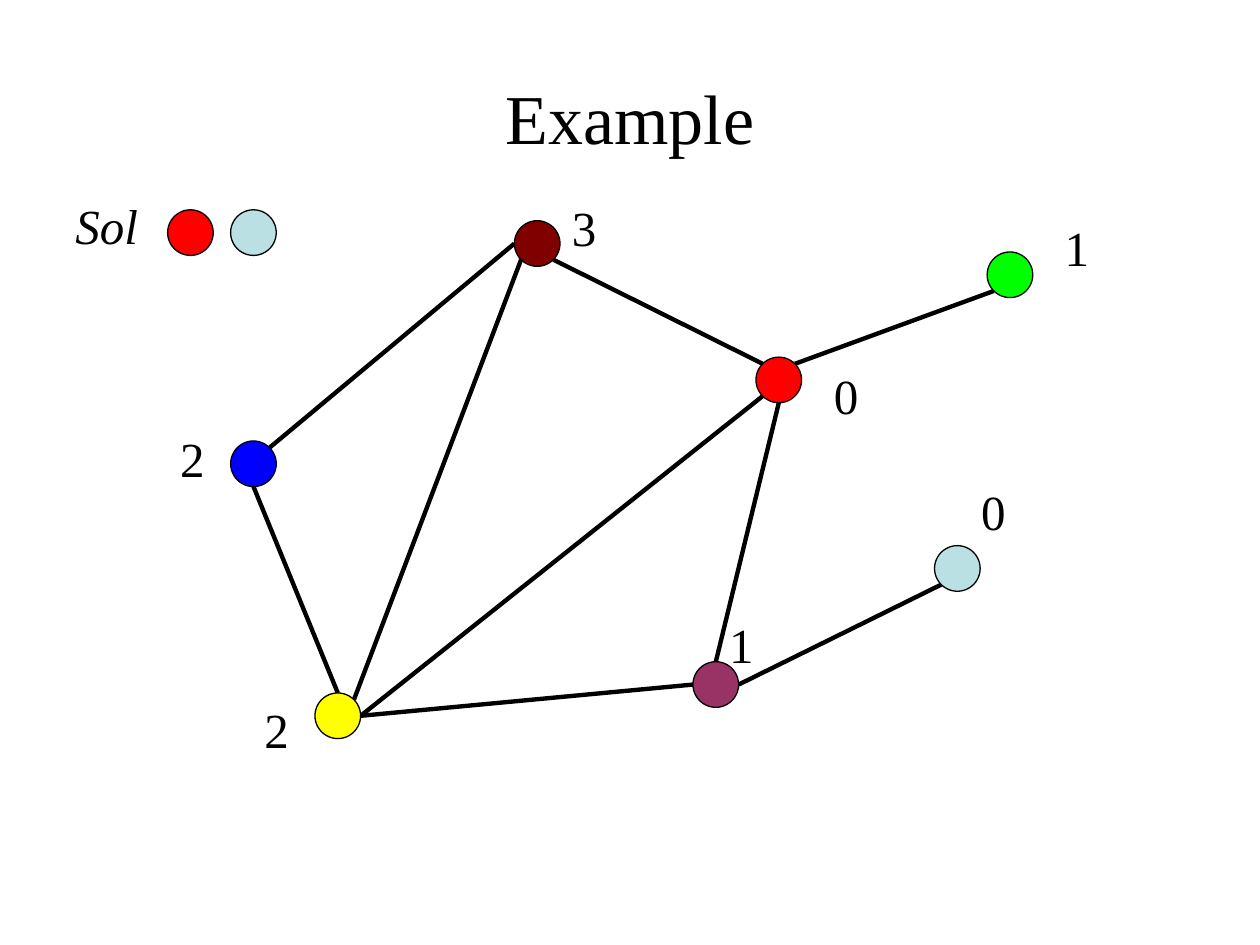
from math import cos, radians, sin

from lxml import etree
from pptx import Presentation
from pptx.dml.color import RGBColor
from pptx.enum.shapes import MSO_CONNECTOR, MSO_SHAPE
from pptx.enum.text import MSO_ANCHOR, MSO_AUTO_SIZE, PP_ALIGN
from pptx.oxml.ns import qn
from pptx.util import Cm, Pt

STRAIGHT = MSO_CONNECTOR.STRAIGHT
OVAL = MSO_SHAPE.OVAL
MIDDLE = MSO_ANCHOR.MIDDLE
NO_AUTO_SIZE = MSO_AUTO_SIZE.NONE
GROW_SHAPE = MSO_AUTO_SIZE.SHAPE_TO_FIT_TEXT
CENTER = PP_ALIGN.CENTER
LEFT = PP_ALIGN.LEFT

FONT = "Times New Roman"
BLACK = "000000"
RED = "FF0000"
PALE = "BBE0E3"
DIAMETER = 0.92
TITLE_ONLY = 5

NODES = {
    "blue": (4.65, 8.89, "0000FF"),
    "green": (19.9, 5.08, "00FF00"),
    "red": (15.24, 7.2, RED),
    "maroon": (10.37, 4.45, "800000"),
    "purple": (13.97, 13.34, "993366"),
    "yellow": (6.35, 13.97, "FFFF00"),
    "pale": (18.84, 11, PALE),
}
SOLUTION = [(3.38, 4.23, RED), (4.65, 4.23, PALE)]

ANGLES = {
    "right": 0,
    "bottom right": 45,
    "bottom": 90,
    "bottom left": 135,
    "left": 180,
    "top left": 225,
    "top": 270,
    "top right": 315,
}
EDGES = [
    ("red", "bottom left", "yellow", "right"),
    ("red", "top left", "maroon", "bottom right"),
    ("purple", "left", "yellow", "right"),
    ("blue", "bottom", "yellow", "top"),
    ("red", "bottom", "purple", "top"),
    ("maroon", "left", "blue", "top right"),
    ("green", "bottom left", "red", "top right"),
    ("maroon", "bottom left", "yellow", "top right"),
    ("pale", "bottom left", "purple", "right"),
]
LABELS = [
    ("3", 11.28, 3.86),
    ("1", 21.21, 4.27),
    ("0", 16.56, 7.24),
    ("0", 19.53, 9.58),
    ("2", 5.08, 13.97),
    ("1", 14.45, 12.27),
    ("2", 3.38, 8.51),
]


def color(value):
    return RGBColor.from_string(value)


def write_text(text_frame, text, size=28, italic=False, alignment=LEFT):
    paragraph = text_frame.paragraphs[0]
    paragraph.alignment = alignment
    run = paragraph.add_run()
    run.text = text
    run.font.name = FONT
    run.font.size = Pt(size)
    run.font.italic = italic
    run.font.color.rgb = color(BLACK)


def set_title(slide, text):
    title = slide.shapes.title
    title.left, title.top = Cm(1.27), Cm(0.76)
    title.width, title.height = Cm(22.86), Cm(3.18)
    title.text_frame.auto_size = NO_AUTO_SIZE
    title.text_frame.vertical_anchor = MIDDLE
    write_text(title.text_frame, text, size=40, alignment=CENTER)


def add_node(slide, left, top, fill):
    shape = slide.shapes.add_shape(
        OVAL, Cm(left), Cm(top), Cm(DIAMETER), Cm(DIAMETER)
    )
    shape.shadow.inherit = False
    shape.fill.solid()
    shape.fill.fore_color.rgb = color(fill)
    shape.line.color.rgb = color(BLACK)
    shape.line.width = Pt(0.75)


def rim_point(node, side):
    left, top, _ = NODES[node]
    radius = DIAMETER / 2
    angle = radians(ANGLES[side])
    return (
        Cm(left + radius + radius * cos(angle)),
        Cm(top + radius + radius * sin(angle)),
    )


def add_edge(slide, start, start_side, end, end_side):
    connector = slide.shapes.add_connector(
        STRAIGHT, *rim_point(start, start_side), *rim_point(end, end_side)
    )
    connector.line.color.rgb = color(BLACK)
    connector.line.width = Pt(2.5)
    properties = connector.element.find(qn("p:spPr"))
    etree.SubElement(properties, qn("a:effectLst"))


def add_label(slide, text, left, top, width=1.02, italic=False):
    shape = slide.shapes.add_textbox(Cm(left), Cm(top), Cm(width), Cm(1.45))
    shape.text_frame.word_wrap = False
    shape.text_frame.auto_size = GROW_SHAPE
    write_text(shape.text_frame, text, italic=italic)


def main():
    presentation = Presentation()
    presentation.slide_width = Cm(25.4)
    presentation.slide_height = Cm(19.05)
    slide = presentation.slides.add_slide(presentation.slide_layouts[TITLE_ONLY])

    set_title(slide, "Example")
    for edge in EDGES:
        add_edge(slide, *edge)
    for node in [*NODES.values(), *SOLUTION]:
        add_node(slide, *node)
    for label in LABELS:
        add_label(slide, *label)
    add_label(slide, "Sol", 1.27, 3.81, width=1.78, italic=True)

    presentation.save("out.pptx")


if __name__ == "__main__":
    main()
